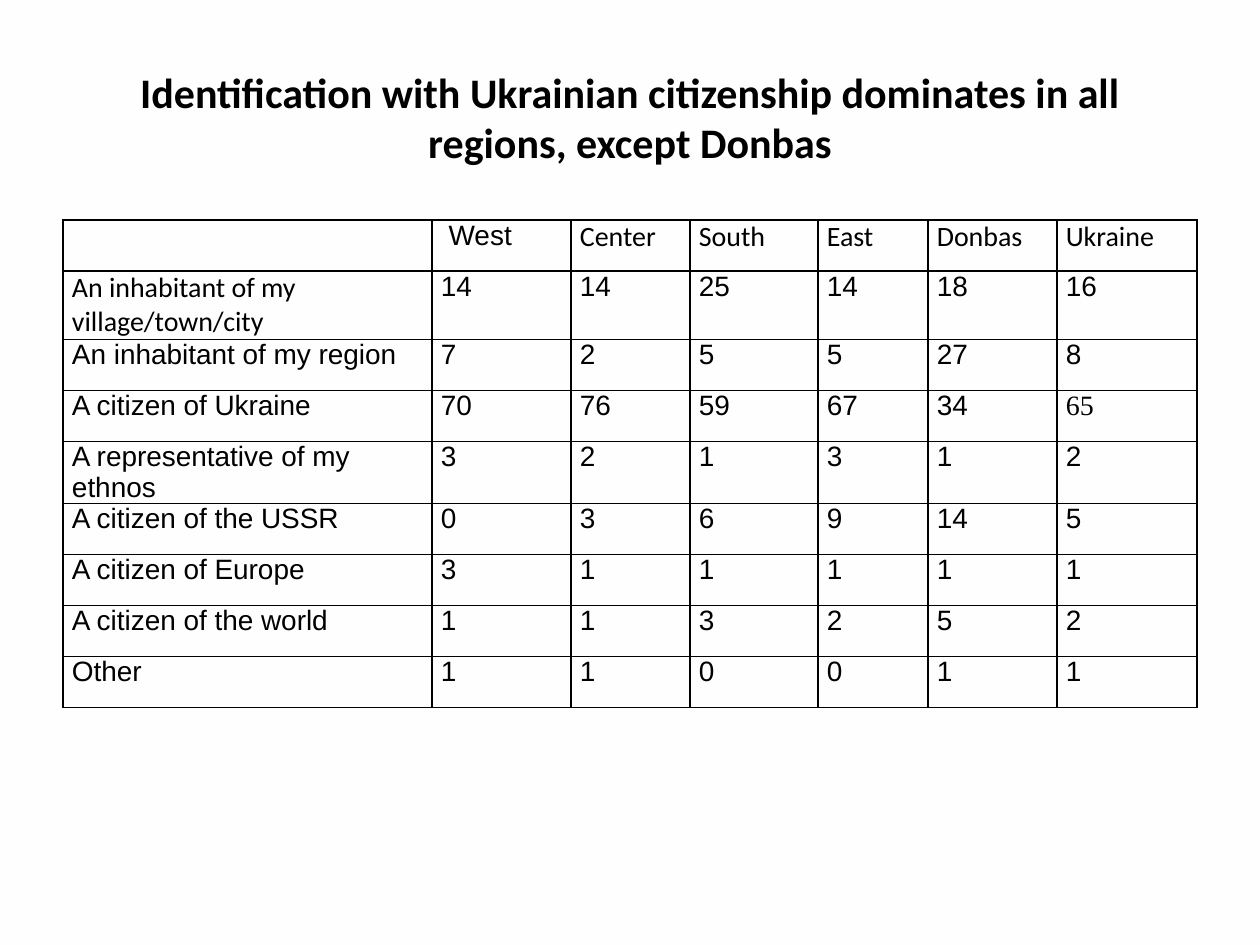
from dataclasses import dataclass

from pptx import Presentation
from pptx.dml.color import RGBColor
from pptx.enum.text import MSO_ANCHOR as Anchor, MSO_AUTO_SIZE as AutoSize, PP_ALIGN as Align
from pptx.oxml import parse_xml
from pptx.oxml.ns import nsdecls
from pptx.util import Emu, Pt


@dataclass(frozen=True)
class Theme:
    background: str = "FFFEFF"
    ink: str = "000000"
    heading: str = "Calibri"
    body: str = "Arial"
    serif: str = "Times New Roman"
    title_size: int = 24
    table_size: int = 16
    border_width: int = 1


THEME = Theme()
TITLE_ONLY = 5
TITLE = "Identification with Ukrainian citizenship dominates in all regions, except Donbas"
COLUMN_WIDTHS = [369, 139, 119, 128, 110, 129, 140]
ROW_HEIGHT = 51
CELL_INSET = 9
ROWS = [
    ["", " West", "Center", "South", "East", "Donbas", "Ukraine"],
    ["An inhabitant of my village/town/city", 14, 14, 25, 14, 18, 16],
    ["An inhabitant of my region", 7, 2, 5, 5, 27, 8],
    ["A citizen of Ukraine", 70, 76, 59, 67, 34, 65],
    ["A representative of my ethnos", 3, 2, 1, 3, 1, 2],
    ["A citizen of the USSR", 0, 3, 6, 9, 14, 5],
    ["A citizen of Europe", 3, 1, 1, 1, 1, 1],
    ["A citizen of the world", 1, 1, 3, 2, 5, 2],
    ["Other", 1, 1, 0, 0, 1, 1],
]
HEADING_CELLS = {(0, column) for column in range(2, 7)} | {(1, 0)}
SERIF_CELLS = {(3, 6)}


def px(length):
    return Emu(round(length * 914400 / 126))


def format_font(font, name, size, bold=False):
    font.name = name
    font.size = Pt(size)
    font.bold = bold
    font.color.rgb = RGBColor.from_string(THEME.ink)


def add_title(slide):
    title = slide.shapes.title
    title.left, title.top, title.width, title.height = map(px, (63, 38, 1134, 157))
    frame = title.text_frame
    frame.word_wrap = True
    frame.auto_size = AutoSize.NONE
    frame.vertical_anchor = Anchor.MIDDLE
    paragraph = frame.paragraphs[0]
    paragraph.alignment = Align.CENTER
    run = paragraph.add_run()
    run.text = TITLE
    format_font(run.font, THEME.heading, THEME.title_size, bold=True)


def add_borders(cell):
    properties = cell._tc.get_or_add_tcPr()
    for position, side in enumerate(("lnL", "lnR", "lnT", "lnB")):
        border = parse_xml(
            f'<a:{side} {nsdecls("a")} w="{Pt(THEME.border_width)}">'
            f'<a:solidFill><a:srgbClr val="{THEME.ink}"/></a:solidFill></a:{side}>'
        )
        properties.insert(position, border)


def cell_font(position):
    if position in HEADING_CELLS:
        return THEME.heading
    return THEME.serif if position in SERIF_CELLS else THEME.body


def fill_cell(cell, value, font_name):
    cell.fill.background()
    add_borders(cell)
    cell.margin_left = cell.margin_right = px(CELL_INSET)
    cell.margin_top = cell.margin_bottom = 0
    cell.vertical_anchor = Anchor.TOP
    paragraph = cell.text_frame.paragraphs[0]
    if value == "":
        paragraph.font.size = Pt(THEME.table_size)
        return
    run = paragraph.add_run()
    run.text = str(value)
    format_font(run.font, font_name, THEME.table_size)


def add_identity_table(slide):
    frame = slide.shapes.add_table(
        len(ROWS), len(COLUMN_WIDTHS), px(63), px(220),
        px(sum(COLUMN_WIDTHS)), px(ROW_HEIGHT * len(ROWS)),
    )
    table = frame.table
    table.first_row = table.horz_banding = False
    for column, width in zip(table.columns, COLUMN_WIDTHS):
        column.width = px(width)
    for row_index, values in enumerate(ROWS):
        table.rows[row_index].height = px(ROW_HEIGHT)
        for column_index, value in enumerate(values):
            position = (row_index, column_index)
            fill_cell(table.cell(*position), value, cell_font(position))


def main():
    presentation = Presentation()
    presentation.slide_width, presentation.slide_height = px(1260), px(945)
    slide = presentation.slides.add_slide(presentation.slide_layouts[TITLE_ONLY])
    background = slide.background.fill
    background.solid()
    background.fore_color.rgb = RGBColor.from_string(THEME.background)
    add_title(slide)
    add_identity_table(slide)
    presentation.save("out.pptx")


if __name__ == "__main__":
    main()
